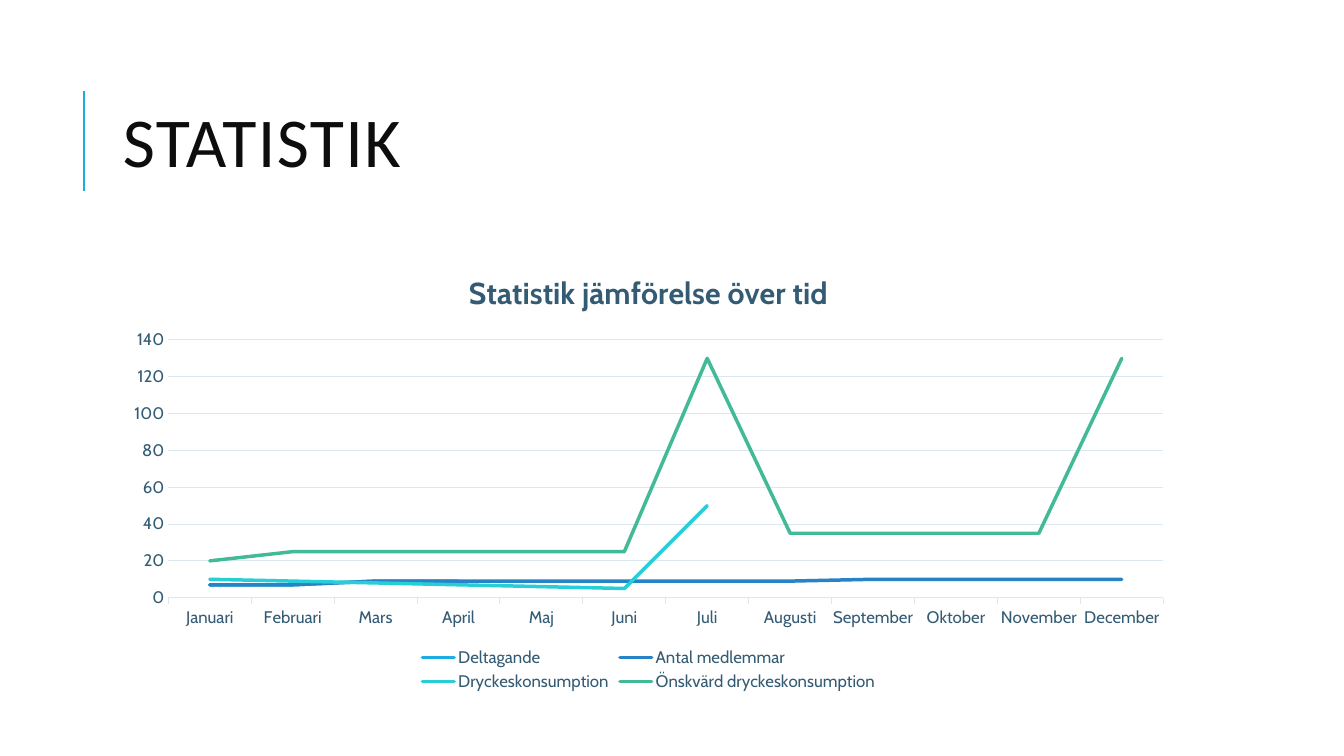
from typing import NamedTuple

from lxml import etree
from pptx import Presentation
from pptx.chart.data import CategoryChartData
from pptx.dml.color import RGBColor
from pptx.enum.chart import XL_CHART_TYPE, XL_LEGEND_POSITION, XL_MARKER_STYLE, XL_TICK_MARK
from pptx.enum.shapes import MSO_CONNECTOR
from pptx.enum.text import MSO_ANCHOR
from pptx.oxml.ns import qn
from pptx.util import Inches, Pt

LINE_CHART = XL_CHART_TYPE.LINE
LEGEND_BOTTOM = XL_LEGEND_POSITION.BOTTOM
NO_MARKER = XL_MARKER_STYLE.NONE
TICK_NONE, TICK_OUTSIDE = XL_TICK_MARK.NONE, XL_TICK_MARK.OUTSIDE
STRAIGHT = MSO_CONNECTOR.STRAIGHT
MIDDLE = MSO_ANCHOR.MIDDLE

SLIDE_WIDTH, SLIDE_HEIGHT = Inches(13.33), Inches(7.5)
CONTENT_LEFT, CONTENT_WIDTH = 1.12 / 13.33, 10.63 / 13.33
ACCENT, INK, SLATE, PALE = "1CADE4", "0D0D0D", "335B74", "DBE8EF"
TITLE_FONT, CHART_FONT = "Calibri", "Cabin"


class Series(NamedTuple):
    name: str
    color: str
    values: tuple[int | None, ...]


MONTHS = ("Januari", "Februari", "Mars", "April", "Maj", "Juni", "Juli",
          "Augusti", "September", "Oktober", "November", "December")
SERIES = (
    Series("Deltagande", ACCENT, (7, 7, 9, 9, None, None, 9) + (None,) * 5),
    Series("Antal medlemmar", "2683C6", (7,) * 2 + (9,) * 6 + (10,) * 4),
    Series("Dryckeskonsumption", "27CED7", (10, 9, 8, 7, 6, 5, 50) + (None,) * 5),
    Series("Önskvärd dryckeskonsumption", "42BA97",
           (20,) + (25,) * 5 + (130,) + (35,) * 4 + (130,)),
)


def across(share: float) -> int:
    return round(SLIDE_WIDTH * share)


def down(share: float) -> int:
    return round(SLIDE_HEIGHT * share)


def rgb(color: str) -> RGBColor:
    return RGBColor.from_string(color)


def set_font(font, name: str, size: float, color: str, bold: bool = False) -> None:
    font.name, font.size, font.bold = name, Pt(size), bold
    font.color.rgb = rgb(color)


def set_line(line, color: str, width: float) -> None:
    line.color.rgb = rgb(color)
    line.width = Pt(width)


def add_accent_line(slide) -> None:
    x = across(0.83 / 13.33)
    connector = slide.shapes.add_connector(STRAIGHT, x, down(0.253), x, down(0.12))
    set_line(connector.line, ACCENT, 1.5)
    properties = connector._element.find(qn("p:spPr"))
    etree.SubElement(properties, qn("a:effectLst"))


def add_title(slide, text: str) -> None:
    shape = slide.shapes.add_textbox(across(CONTENT_LEFT), down(0.085),
                                     across(CONTENT_WIDTH), down(0.219))
    frame = shape.text_frame
    frame.word_wrap = True
    frame.vertical_anchor = MIDDLE
    paragraph = frame.paragraphs[0]
    run = paragraph.add_run()
    run.text = text
    paragraph.line_spacing = 0.8
    set_font(paragraph.font, TITLE_FONT, 50, INK)
    # Letter spacing, in hundredths of a point
    run._r.get_or_add_rPr().set("spc", "100")


def style_axes(chart) -> None:
    category_axis, value_axis = chart.category_axis, chart.value_axis
    for axis in (category_axis, value_axis):
        set_font(axis.tick_labels.font, CHART_FONT, 12, SLATE)
        axis.minor_tick_mark = TICK_NONE
    category_axis.major_tick_mark = TICK_OUTSIDE
    set_line(category_axis.format.line, PALE, 0.75)
    value_axis.major_tick_mark = TICK_NONE
    value_axis.format.line.fill.background()
    value_axis.has_major_gridlines = True
    set_line(value_axis.major_gridlines.format.line, PALE, 0.75)
    value_axis.tick_labels.number_format = "0"
    value_axis.tick_labels.number_format_is_linked = False


def add_line_chart(slide, title: str) -> None:
    data = CategoryChartData()
    data.categories = MONTHS
    for series in SERIES:
        data.add_series(series.name, series.values)
    chart = slide.shapes.add_chart(LINE_CHART, across(CONTENT_LEFT), down(1 / 3),
                                   across(CONTENT_WIDTH), down(0.587), data).chart
    set_font(chart.font, CHART_FONT, 10, "000000")

    chart.has_title = True
    chart.chart_title.include_in_layout = False
    paragraph = chart.chart_title.text_frame.paragraphs[0]
    paragraph.text = title
    set_font(paragraph.font, CHART_FONT, 21.6, SLATE, bold=True)

    chart.has_legend = True
    chart.legend.position = LEGEND_BOTTOM
    chart.legend.include_in_layout = False
    set_font(chart.legend.font, CHART_FONT, 12, SLATE)
    style_axes(chart)

    plot = chart.plots[0]
    plot.vary_by_categories = False
    for series, plotted in zip(SERIES, plot.series):
        plotted.smooth = False
        plotted.marker.style = NO_MARKER
        line = plotted.format.line
        set_line(line, series.color, 2.5)
        # Rounded line ends
        plotted._element.find(qn("c:spPr")).find(qn("a:ln")).set("cap", "rnd")


def main() -> None:
    presentation = Presentation()
    presentation.slide_width, presentation.slide_height = SLIDE_WIDTH, SLIDE_HEIGHT
    slide = presentation.slides.add_slide(presentation.slide_layouts[6])
    add_accent_line(slide)
    add_title(slide, "STATISTIK")
    add_line_chart(slide, "Statistik jämförelse över tid")
    presentation.save("out.pptx")


if __name__ == "__main__":
    main()
